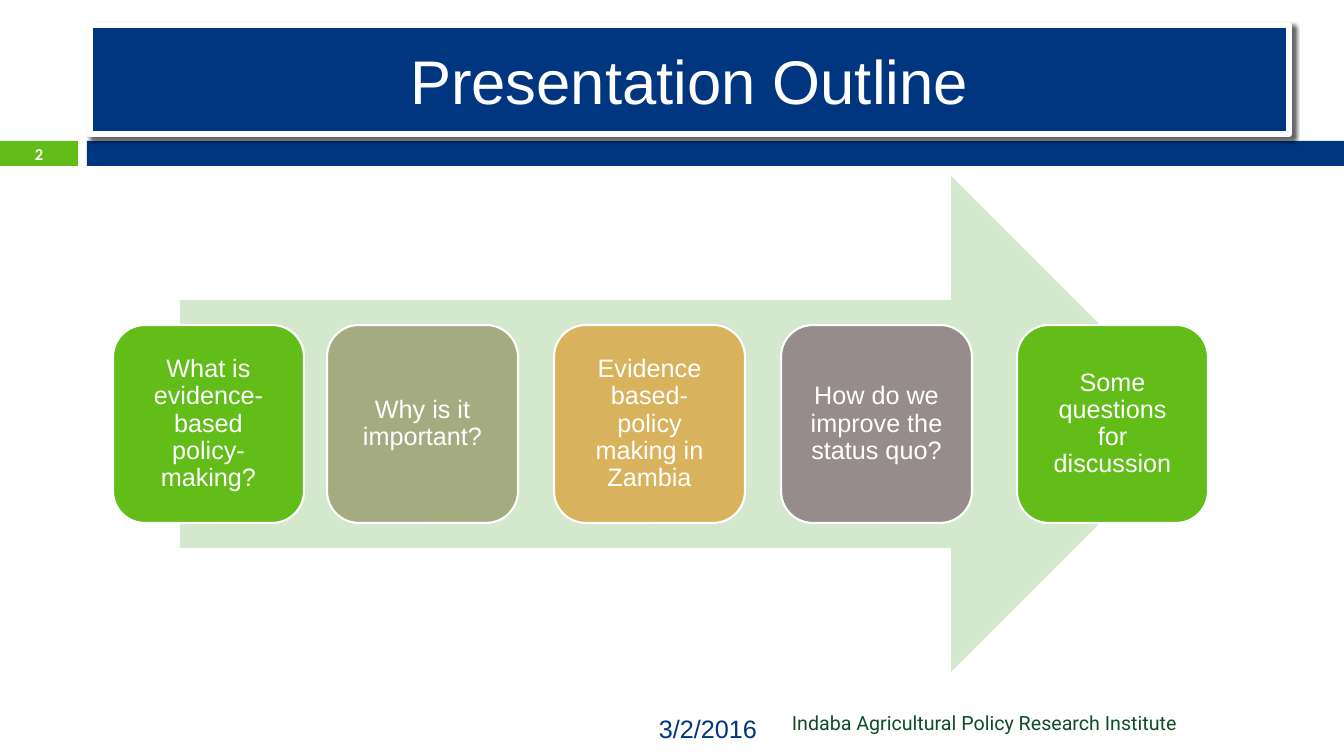
from dataclasses import dataclass
from typing import NamedTuple

from lxml.etree import SubElement
from pptx import Presentation
from pptx.dml.color import RGBColor
from pptx.enum.shapes import MSO_SHAPE as Preset
from pptx.enum.text import MSO_ANCHOR as Anchor, PP_ALIGN as Align
from pptx.oxml.ns import qn
from pptx.shapes.autoshape import Shape
from pptx.slide import Slide
from pptx.util import Emu, Pt

PX_PER_INCH = 100.8


@dataclass(frozen=True)
class Theme:
    navy: str = "003580"
    green: str = "62BD19"
    pale_green: str = "D3E8CC"
    dark_green: str = "0F4D2A"
    sage: str = "A5AB81"
    gold: str = "D8B25C"
    taupe: str = "968C8C"
    white: str = "FFFFFF"
    title_size: float = 44
    body_size: float = 18
    footer_size: float = 14
    number_size: float = 11.9


THEME = Theme()


class Box(NamedTuple):
    left: int
    top: int
    width: int
    height: int


class Step(NamedTuple):
    left: int
    color: str
    text: str


STEP_TOP, STEP_WIDTH, STEP_HEIGHT, STEP_INSET = 325, 191, 198, 17
STEPS = [
    Step(113, THEME.green, "What is evidence-based policy-making?"),
    Step(327, THEME.sage, "Why is it important?"),
    Step(554, THEME.gold, "Evidence based-policy making in Zambia"),
    Step(781, THEME.taupe, "How do we improve the status quo?"),
    Step(1017, THEME.green, "Some questions for discussion"),
]


def px(length: int) -> Emu:
    return Emu(round(length * 914400 / PX_PER_INCH))


def rgb(color: str) -> RGBColor:
    return RGBColor.from_string(color)


def add_block(slide: Slide, preset: Preset, box: Box, fill: str,
              outline_width: float = 0) -> Shape:
    """Add a filled shape, with a white outline if a width in points is given."""
    block = slide.shapes.add_shape(preset, *map(px, box))
    block.shadow.inherit = False
    block.fill.solid()
    block.fill.fore_color.rgb = rgb(fill)
    if outline_width:
        block.line.color.rgb = rgb(THEME.white)
        block.line.width = Pt(outline_width)
    else:
        block.line.fill.background()
    return block


def write(shape: Shape, text: str, *, size: float, color: str = THEME.white,
          font: str = "Arial", bold: bool = False, align: Align = Align.CENTER,
          anchor: Anchor = Anchor.MIDDLE, inset: int | None = None,
          line_spacing: float = 1.0) -> None:
    frame = shape.text_frame
    frame.word_wrap = True
    frame.vertical_anchor = anchor
    if inset is not None:
        frame.margin_left = frame.margin_right = px(inset)
        frame.margin_top = frame.margin_bottom = px(inset)
    paragraph = frame.paragraphs[0]
    paragraph.alignment = align
    paragraph.line_spacing = line_spacing
    run = paragraph.add_run()
    run.text = text
    run.font.name = font
    run.font.size = Pt(size)
    run.font.bold = bold
    run.font.color.rgb = rgb(color)


def add_drop_shadow(shape: Shape) -> None:
    effects = shape.element.spPr.find(qn("a:effectLst"))
    shadow = SubElement(effects, qn("a:outerShdw"), blurRad="38100",
                        dist="38100", dir="2700000", rotWithShape="0")
    shade = SubElement(shadow, qn("a:srgbClr"), val="000000")
    SubElement(shade, qn("a:alpha"), val="60000")


def add_header(slide: Slide) -> None:
    add_block(slide, Preset.RECTANGLE, Box(0, 141, 78, 25), THEME.green)
    add_block(slide, Preset.RECTANGLE, Box(87, 141, 1257, 25), THEME.navy)
    title = add_block(slide, Preset.RECTANGLE, Box(90, 25, 1199, 109),
                      THEME.navy, outline_width=4.5)
    add_drop_shadow(title)
    write(title, "Presentation Outline", size=THEME.title_size)
    number = slide.shapes.add_textbox(*map(px, Box(0, 140, 78, 27)))
    write(number, "2", size=THEME.number_size, font="Calibri", bold=True)


def add_outline_arrow(slide: Slide) -> None:
    add_block(slide, Preset.RIGHT_ARROW, Box(180, 176, 1019, 496),
              THEME.pale_green)
    for step in STEPS:
        box = Box(step.left, STEP_TOP, STEP_WIDTH, STEP_HEIGHT)
        card = add_block(slide, Preset.ROUNDED_RECTANGLE, box, step.color,
                         outline_width=1.5)
        write(card, step.text, size=THEME.body_size, inset=STEP_INSET,
              line_spacing=0.9)


def add_footer(slide: Slide) -> None:
    institute = slide.shapes.add_textbox(*map(px, Box(616, 706, 571, 34)))
    write(institute, "Indaba Agricultural Policy Research Institute",
          size=THEME.footer_size, color=THEME.dark_green, font="Roboto",
          align=Align.RIGHT, anchor=Anchor.TOP)
    date = slide.shapes.add_textbox(*map(px, Box(649, 708, 537, 40)))
    write(date, "3/2/2016", size=THEME.body_size, color=THEME.navy,
          align=Align.LEFT, anchor=Anchor.TOP)


def main() -> None:
    deck = Presentation()
    deck.slide_width, deck.slide_height = px(1344), px(756)
    slide = deck.slides.add_slide(deck.slide_layouts[6])
    add_header(slide)
    add_outline_arrow(slide)
    add_footer(slide)
    deck.save("out.pptx")


if __name__ == "__main__":
    main()
